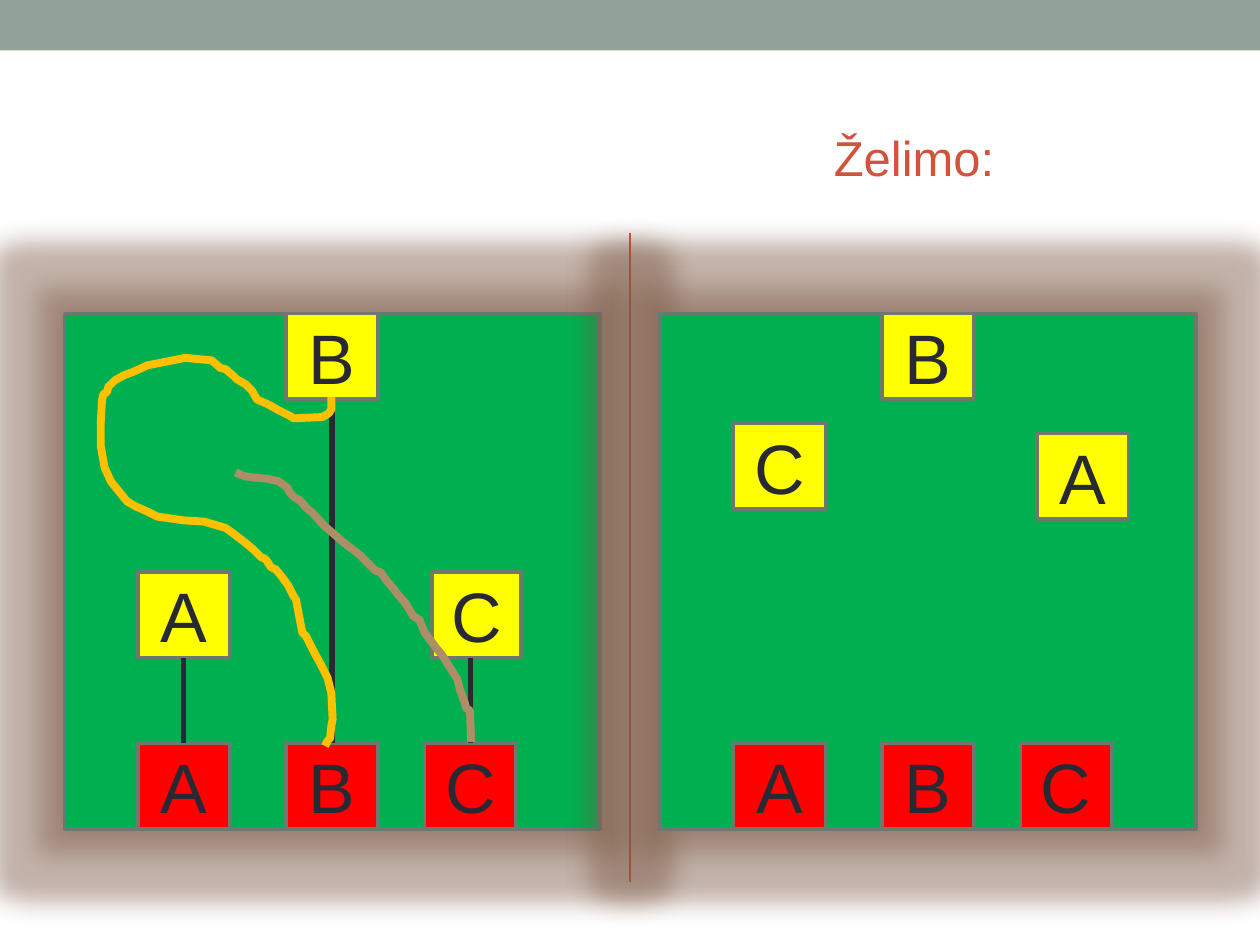
from dataclasses import dataclass

from lxml import etree
from pptx import Presentation
from pptx.dml.color import RGBColor
from pptx.enum.shapes import MSO_CONNECTOR, MSO_SHAPE
from pptx.enum.text import MSO_ANCHOR, PP_ALIGN
from pptx.oxml.ns import qn
from pptx.util import Cm, Pt

RECT = MSO_SHAPE.RECTANGLE
STRAIGHT = MSO_CONNECTOR.STRAIGHT
MIDDLE = MSO_ANCHOR.MIDDLE
CENTER = PP_ALIGN.CENTER
TOP, BOTTOM = 0, 2

SAGE = RGBColor(0x93, 0xA2, 0x99)
RUST = RGBColor(0xD2, 0x53, 0x3C)
GREEN = RGBColor(0x00, 0xB0, 0x50)
RED = RGBColor(0xFF, 0x00, 0x00)
YELLOW = RGBColor(0xFF, 0xFF, 0x00)
GRAY = RGBColor(0x6D, 0x78, 0x71)
DARK = RGBColor(0x29, 0x29, 0x34)
TAN = RGBColor(0xAD, 0x8F, 0x67)
AMBER = RGBColor(0xFF, 0xC0, 0x00)
GLOW = RGBColor(0x7D, 0x5A, 0x46)

BOARD_TOP, BOARD_W, BOARD_H = 6.32, 10.8, 10.39
LEFT_BOARD, RIGHT_BOARD = 1.3, 13.31
TILE_W, TILE_H = 1.85, 1.73
BASE_TOP = 14.98
COLUMNS = {"A": 1.48, "B": 4.47, "C": 7.26}


@dataclass(frozen=True)
class Tile:
    label: str
    x: float
    y: float
    color: RGBColor = YELLOW
    w: float = TILE_W


@dataclass(frozen=True)
class Route:
    color: RGBColor
    points: tuple[tuple[int, int], ...]


LEFT_TILES = (
    Tile("C", 7.41, 11.53, w=1.8),
    Tile("A", COLUMNS["A"], 11.53),
    Tile("B", COLUMNS["B"], BOARD_TOP),
)
RIGHT_TILES = (
    Tile("A", 7.59, 8.74),
    Tile("C", COLUMNS["A"], 8.53),
    Tile("B", COLUMNS["B"], BOARD_TOP),
)
ROUTES = (
    Route(TAN, (
        (374, 589), (373, 564), (370, 562), (369, 558), (365, 547), (363, 539),
        (356, 528), (351, 520), (346, 514), (337, 502), (333, 492), (328, 489),
        (322, 479), (315, 471), (313, 468), (307, 461), (302, 454), (298, 453),
        (293, 448), (285, 440), (272, 430), (264, 423), (257, 417), (248, 407),
        (243, 403), (238, 397), (234, 395), (230, 391), (228, 387), (221, 382),
        (212, 380), (201, 379), (194, 378), (187, 375))),
    Route(AMBER, (
        (258, 592), (260, 588), (262, 586), (263, 576), (264, 571), (263, 550),
        (260, 538), (254, 526), (250, 519), (248, 515), (243, 505), (240, 502),
        (238, 492), (235, 476), (233, 473), (229, 465), (224, 458), (219, 452),
        (215, 450), (211, 444), (207, 442), (201, 436), (195, 431), (186, 424),
        (179, 419), (162, 414), (146, 413), (125, 410), (117, 406), (108, 402),
        (101, 398), (96, 392), (88, 382), (83, 371), (80, 354), (80, 335),
        (81, 318), (82, 313), (85, 311), (86, 307), (91, 302), (98, 298),
        (106, 295), (117, 290), (132, 287), (147, 284), (168, 286), (175, 292),
        (179, 293), (185, 298), (188, 301), (195, 305), (200, 310), (204, 317),
        (213, 321), (220, 325), (230, 330), (233, 332), (256, 331), (261, 328),
        (263, 325), (263, 315))),
)


def write(tf, text: str, *, size: float, color: RGBColor, bold: bool = False) -> None:
    tf.word_wrap = True
    tf.vertical_anchor = MIDDLE
    p = tf.paragraphs[0]
    p.alignment = CENTER
    r = p.add_run()
    r.text = text
    r.font.name = "Arial"
    r.font.size = Pt(size)
    r.font.bold = bold
    r.font.color.rgb = color


def add_rect(slide, x: float, y: float, w: float, h: float, fill: RGBColor,
             outlined: bool = True):
    sp = slide.shapes.add_shape(RECT, Cm(x), Cm(y), Cm(w), Cm(h))
    sp.shadow.inherit = False
    sp.fill.solid()
    sp.fill.fore_color.rgb = fill
    if outlined:
        sp.line.color.rgb = GRAY
        sp.line.width = Pt(2.08)
    else:
        sp.line.fill.background()
    return sp


def add_effect(sp, tag: str, **attrs: str) -> None:
    effects = sp._element.spPr.find(qn("a:effectLst"))
    effect = etree.SubElement(effects, qn(tag), attrs)
    color = etree.SubElement(effect, qn("a:srgbClr"), val=str(GLOW))
    etree.SubElement(color, qn("a:alpha"), val="40000")


def add_line(slide, x: float, y1: float, y2: float, color: RGBColor, width: float):
    cn = slide.shapes.add_connector(STRAIGHT, Cm(x), Cm(y1), Cm(x), Cm(y2))
    cn.line.color.rgb = color
    cn.line.width = Pt(width)
    etree.SubElement(cn._element.spPr, qn("a:effectLst"))
    return cn


def add_tile(slide, left: float, tile: Tile):
    sp = add_rect(slide, left + tile.x, tile.y, tile.w, TILE_H, tile.color)
    write(sp.text_frame, tile.label, size=40, color=DARK)
    return sp


def add_board(slide, left: float, tiles: tuple[Tile, ...]) -> tuple[dict, dict]:
    board = add_rect(slide, left, BOARD_TOP, BOARD_W, BOARD_H, GREEN)
    add_effect(board, "a:glow", rad=str(Cm(0.97)))
    add_effect(board, "a:outerShdw", blurRad=str(Cm(0.35)), dist="0",
               algn="ctr", rotWithShape="0")
    bases = {name: add_tile(slide, left, Tile(name, x, BASE_TOP, RED))
             for name, x in COLUMNS.items()}
    movers = {tile.label: add_tile(slide, left, tile) for tile in tiles}
    return bases, movers


def add_route(slide, route: Route) -> None:
    start, *rest = route.points
    fb = slide.shapes.build_freeform(*start, scale=Cm(0.0254))
    fb.add_line_segments(rest, close=False)
    sp = fb.convert_to_shape()
    sp.shadow.inherit = False
    sp.fill.background()
    sp.line.color.rgb = route.color
    sp.line.width = Pt(4.5)


def main() -> None:
    prs = Presentation()
    prs.slide_width, prs.slide_height = Cm(25.4), Cm(19.05)
    slide = prs.slides.add_slide(prs.slide_layouts[4])
    for ph in list(slide.placeholders):
        if ph.placeholder_format.idx != 3:
            ph._element.getparent().remove(ph._element)
    heading = slide.placeholders[3]
    heading.left, heading.top = Cm(13.28), Cm(2.13)
    heading.width, heading.height = Cm(10.29), Cm(2.06)
    write(heading.text_frame, "Želimo:", size=28, color=RUST)

    add_rect(slide, 0, 0, 25.4, 1.02, SAGE, outlined=False)
    add_line(slide, 12.7, 4.7, 17.78, RUST, 1.5)

    bases, movers = add_board(slide, LEFT_BOARD, LEFT_TILES)
    for name, base in bases.items():
        x = LEFT_BOARD + COLUMNS[name] + TILE_W / 2
        mover = movers[name]
        cn = add_line(slide, x, (mover.top + mover.height) / Cm(1), BASE_TOP, DARK, 3)
        if mover.left == base.left:
            cn.begin_connect(mover, BOTTOM)
        cn.end_connect(base, TOP)
    for route in ROUTES:
        add_route(slide, route)

    add_board(slide, RIGHT_BOARD, RIGHT_TILES)
    prs.save("out.pptx")


if __name__ == "__main__":
    main()
